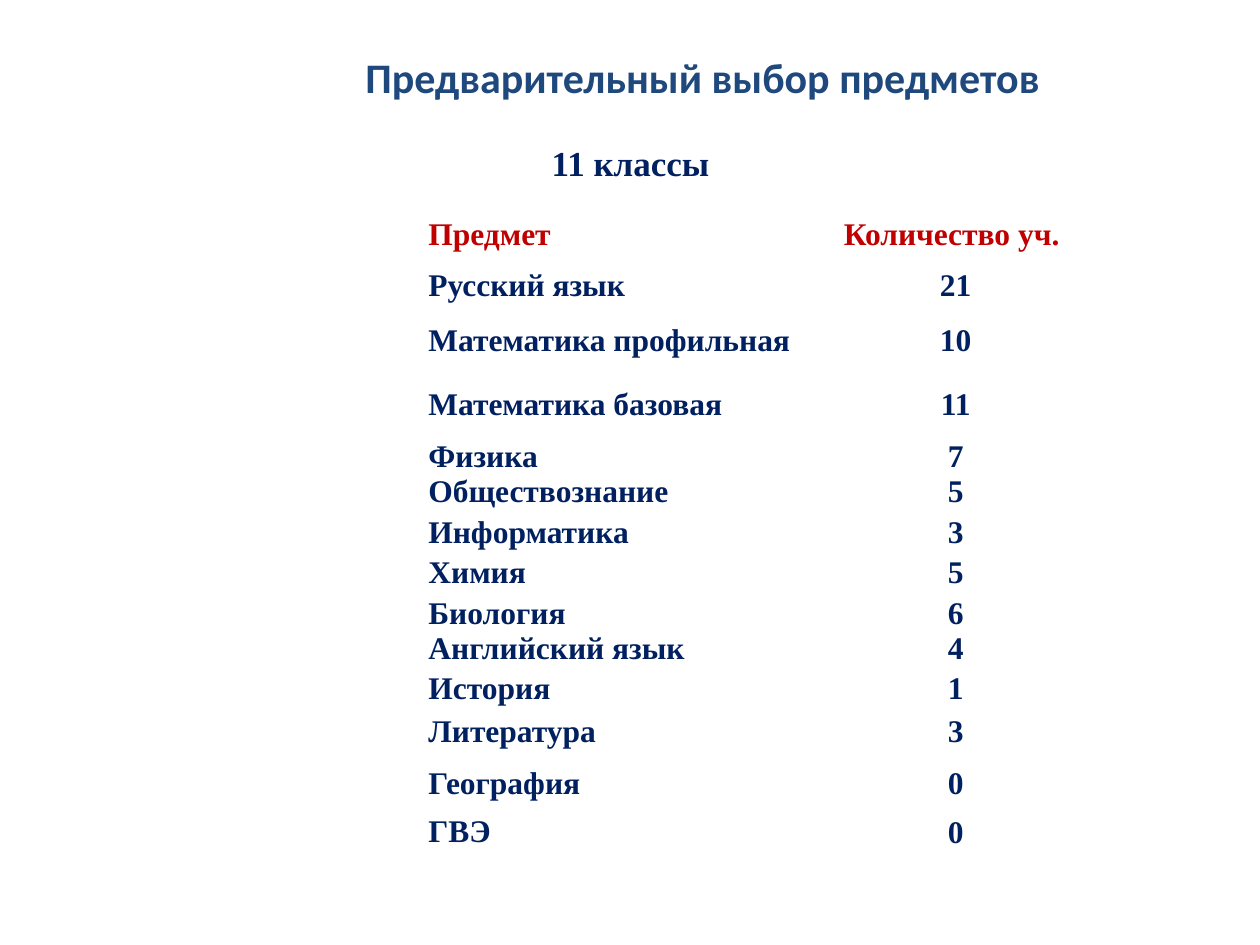
from dataclasses import dataclass

from lxml.etree import SubElement
from pptx import Presentation
from pptx.dml.color import RGBColor
from pptx.enum.text import MSO_ANCHOR, MSO_AUTO_SIZE, PP_ALIGN
from pptx.oxml.ns import qn
from pptx.util import Pt


@dataclass(frozen=True)
class Theme:
    white: str = "FFFFFF"
    title: str = "1F497D"
    navy: str = "002060"
    red: str = "C00000"
    title_font: str = "Calibri"
    table_font: str = "Times New Roman"
    title_size: int = 24
    caption_size: int = 20
    cell_size: int = 18
    empty_size: int = 10


THEME = Theme()

SUBJECTS = [
    ("Русский язык", "21"),
    ("Математика профильная", "10"),
    ("Математика базовая", "11"),
    ("Физика\nОбществознание", "7\n5"),
    ("Информатика", "3"),
    ("Химия", "5"),
    ("Биология\nАнглийский язык", "6\n4"),
    ("История", "1"),
    ("Литература", "3"),
    ("География", "0"),
    ("ГВЭ", "0"),
]
COLUMN_WIDTHS = [139, 232.5, 139]
ROW_HEIGHTS = [45.4, 34.6, 23.8, 38.2, 35.3, 23.8, 23, 23, 32.4, 20.9, 26.6, 32.4, 19.4]


def apply(target, values):
    for name, value in values.items():
        setattr(target, name, value)


def write_lines(frame, text, size, font, color, align):
    for index, line in enumerate(text.split("\n")):
        para = frame.paragraphs[0] if index == 0 else frame.add_paragraph()
        para.alignment = align
        span = para.add_run()
        span.text = line
        apply(span.font, {"size": Pt(size), "name": font, "bold": True})
        span.font.color.rgb = RGBColor.from_string(color)


def add_title(page, text):
    box = page.shapes.title
    apply(box, {"left": Pt(201.6), "top": Pt(26), "width": Pt(404), "height": Pt(36)})
    frame = box.text_frame
    apply(frame, {"word_wrap": False, "auto_size": MSO_AUTO_SIZE.SHAPE_TO_FIT_TEXT,
                  "vertical_anchor": MSO_ANCHOR.TOP})
    write_lines(frame, text, THEME.title_size, THEME.title_font, THEME.title, PP_ALIGN.LEFT)


def add_borders(cell):
    properties = cell._tc.get_or_add_tcPr()
    for index, side in enumerate(("a:lnL", "a:lnR", "a:lnT", "a:lnB")):
        line = SubElement(properties, qn(side), w=str(Pt(1)))
        properties.insert(index, line)
        fill = SubElement(line, qn("a:solidFill"))
        SubElement(fill, qn("a:srgbClr"), val=THEME.white)


def format_cell(cell):
    apply(cell, {"margin_left": Pt(0.72), "margin_right": Pt(0.72), "margin_top": Pt(0.72),
                 "margin_bottom": 0, "vertical_anchor": MSO_ANCHOR.MIDDLE})
    cell.fill.solid()
    cell.fill.fore_color.rgb = RGBColor.from_string(THEME.white)
    add_borders(cell)


def add_subject_table(page):
    rows = [("11 классы", ""), ("Предмет", "Количество уч. ")] + SUBJECTS
    table = page.shapes.add_table(len(rows), len(COLUMN_WIDTHS), Pt(105.1), Pt(71.3),
                                  Pt(sum(COLUMN_WIDTHS)), Pt(sum(ROW_HEIGHTS))).table
    apply(table, {"first_row": False, "horz_banding": False})
    for column, width in zip(table.columns, COLUMN_WIDTHS):
        column.width = Pt(width)
    for row_index, (subject, count) in enumerate(rows):
        table.rows[row_index].height = Pt(ROW_HEIGHTS[row_index])
        color = THEME.red if row_index == 1 else THEME.navy
        size = THEME.caption_size if row_index == 0 else THEME.cell_size
        for column_index, text in enumerate(("", subject, count)):
            cell = table.cell(row_index, column_index)
            format_cell(cell)
            if text:
                centred = row_index == 0 or column_index == 2
                align = PP_ALIGN.CENTER if centred else PP_ALIGN.LEFT
                write_lines(cell.text_frame, text, size, THEME.table_font, color, align)
            else:
                para = cell.text_frame.paragraphs[0]
                SubElement(para._p, qn("a:endParaRPr"), sz=str(THEME.empty_size * 100))
    table.cell(len(rows) - 1, 2).vertical_anchor = MSO_ANCHOR.BOTTOM


def main():
    deck = Presentation()
    apply(deck, {"slide_width": Pt(720), "slide_height": Pt(540)})
    page = deck.slides.add_slide(deck.slide_layouts[5])
    add_title(page, "Предварительный выбор предметов")
    add_subject_table(page)
    deck.save("out.pptx")


if __name__ == "__main__":
    main()
